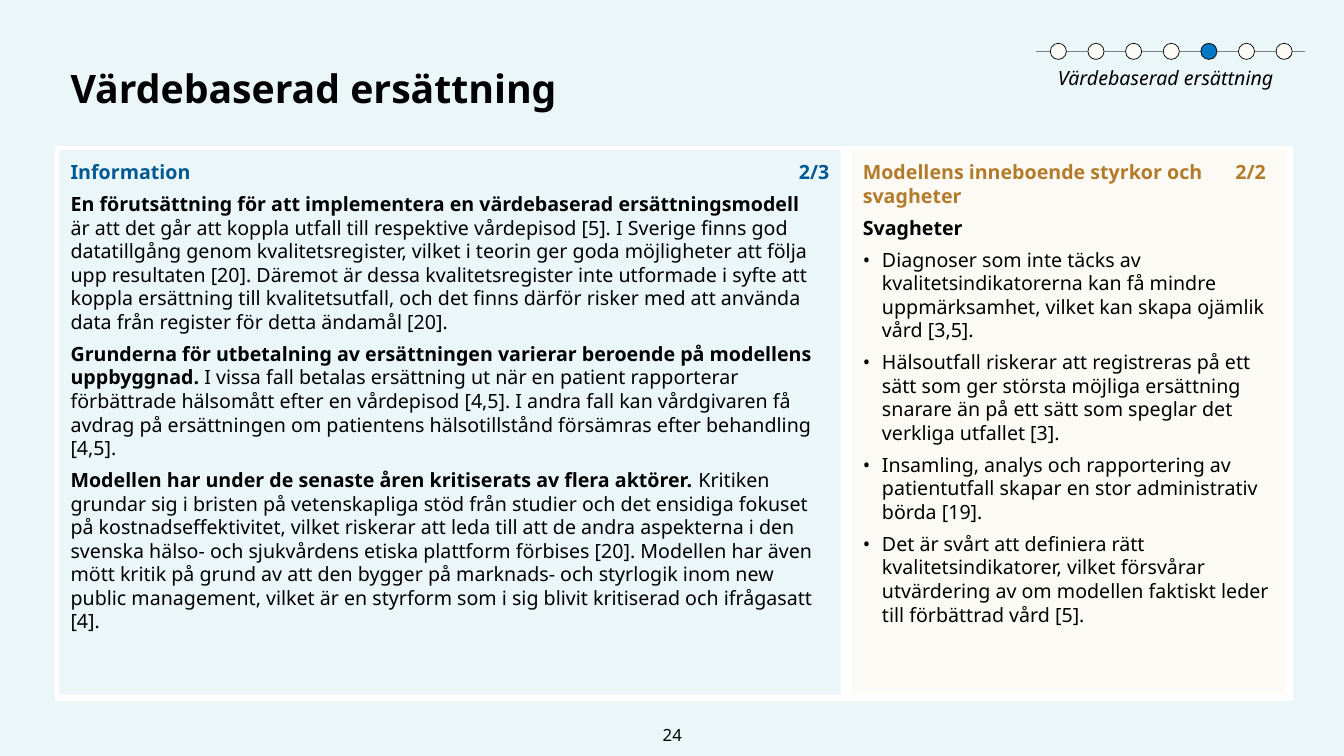
"""Build the slide on value-based reimbursement."""
from dataclasses import dataclass

from lxml import etree
from pptx import Presentation
from pptx.dml.color import RGBColor
from pptx.enum.shapes import MSO_CONNECTOR, MSO_SHAPE
from pptx.enum.text import MSO_ANCHOR, MSO_AUTO_SIZE, PP_ALIGN
from pptx.oxml.ns import qn
from pptx.shapes.autoshape import Shape
from pptx.slide import Slide
from pptx.util import Inches, Pt

LEFT, MID, RIGHT = PP_ALIGN.LEFT, PP_ALIGN.CENTER, PP_ALIGN.RIGHT
TOP, CENTER, BOTTOM = MSO_ANCHOR.TOP, MSO_ANCHOR.MIDDLE, MSO_ANCHOR.BOTTOM
RECT, OVAL = MSO_SHAPE.RECTANGLE, MSO_SHAPE.OVAL
LINE = MSO_CONNECTOR.STRAIGHT
FIXED = MSO_AUTO_SIZE.NONE

FONT = "Noto Sans"
BLACK = RGBColor(0x00, 0x00, 0x00)
WHITE = RGBColor(0xFF, 0xFF, 0xFF)
GREY = RGBColor(0x80, 0x80, 0x80)
ICE = RGBColor(0xEB, 0xF6, 0xF9)
CREAM = RGBColor(0xFC, 0xFA, 0xF5)
NAVY = RGBColor(0x00, 0x58, 0x92)
BLUE = RGBColor(0x00, 0x78, 0xC4)
GOLD = RGBColor(0xB2, 0x7B, 0x2A)

STEPS, ACTIVE = 7, 4
DOT, FIRST, LAST = 0.16, 10.42, 12.66
TOPIC = "Värdebaserad ersättning"


@dataclass(frozen=True)
class Box:
    left: float
    top: float
    width: float
    height: float


@dataclass(frozen=True)
class Para:
    lead: str = ""
    rest: str = ""
    color: RGBColor = BLACK
    bullet: bool = False


@dataclass(frozen=True)
class Panel:
    back: Box
    body: Box
    badge: Box
    fill: RGBColor
    color: RGBColor
    page: str
    paras: tuple[Para, ...]


PANELS = (
    Panel(
        Box(0.59, 1.49, 7.75, 5.4), Box(0.7, 1.59, 7.53, 4.88),
        Box(7.26, 1.59, 0.97, 0.23), ICE, NAVY, "2/3",
        (
            Para("Information", color=NAVY),
            Para(
                "En förutsättning för att implementera en värdebaserad ersättningsmodell ",
                "är att det går att koppla utfall till respektive vårdepisod [5]. I Sverige "
                "finns god datatillgång genom kvalitetsregister, vilket i teorin ger goda "
                "möjligheter att följa upp resultaten [20]. Däremot är dessa "
                "kvalitetsregister inte utformade i syfte att koppla ersättning till "
                "kvalitetsutfall, och det finns därför risker med att använda data från "
                "register för detta ändamål [20].",
            ),
            Para(
                "Grunderna för utbetalning av ersättningen varierar beroende på modellens "
                "uppbyggnad. ",
                "I vissa fall betalas ersättning ut när en patient rapporterar förbättrade "
                "hälsomått efter en vårdepisod [4,5]. I andra fall kan vårdgivaren få avdrag "
                "på ersättningen om patientens hälsotillstånd försämras efter behandling "
                "[4,5].",
            ),
            Para(
                "Modellen har under de senaste åren kritiserats av flera aktörer. ",
                "Kritiken grundar sig i bristen på vetenskapliga stöd från studier och det "
                "ensidiga fokuset på kostnadseffektivitet, vilket riskerar att leda till att "
                "de andra aspekterna i den svenska hälso- och sjukvårdens etiska plattform "
                "förbises [20]. Modellen har även mött kritik på grund av att den bygger på "
                "marknads- och styrlogik inom new public management, vilket är en styrform "
                "som i sig blivit kritiserad och ifrågasatt [4].",
            ),
        ),
    ),
    Panel(
        Box(8.45, 1.49, 4.3, 5.4), Box(8.56, 1.59, 4.19, 5.2),
        Box(11.59, 1.59, 0.97, 0.23), CREAM, GOLD, "2/2",
        (
            Para("Modellens inneboende styrkor och svagheter", color=GOLD),
            Para("Svagheter"),
            Para(rest="Diagnoser som inte täcks av kvalitetsindikatorerna kan få mindre "
                 "uppmärksamhet, vilket kan skapa ojämlik vård [3,5].", bullet=True),
            Para(rest="Hälsoutfall riskerar att registreras på ett sätt som ger största "
                 "möjliga ersättning snarare än på ett sätt som speglar det verkliga "
                 "utfallet [3].", bullet=True),
            Para(rest="Insamling, analys och rapportering av patientutfall skapar en stor "
                 "administrativ börda [19].", bullet=True),
            Para(rest="Det är svårt att definiera rätt kvalitetsindikatorer, vilket "
                 "försvårar utvärdering av om modellen faktiskt leder till förbättrad vård "
                 "[5].", bullet=True),
        ),
    ),
)


def place(shape: Shape, box: Box) -> None:
    """Move a shape to its box."""
    shape.left, shape.top = Inches(box.left), Inches(box.top)
    shape.width, shape.height = Inches(box.width), Inches(box.height)


def write(shape: Shape, *paras: Para, size: float = 14, align: PP_ALIGN = LEFT,
          anchor: MSO_ANCHOR = TOP, inset: tuple[float, ...] = (0, 0, 0.1, 0.05),
          pitch: float = 1.0, after: float = 0, italic: bool = False) -> None:
    """Fill a shape with formatted paragraphs."""
    frame = shape.text_frame
    frame.word_wrap, frame.auto_size = True, FIXED
    frame.vertical_anchor = anchor
    (frame.margin_left, frame.margin_top,
     frame.margin_right, frame.margin_bottom) = map(Inches, inset)
    for num, para in enumerate(paras):
        line = frame.add_paragraph() if num else frame.paragraphs[0]
        line.alignment, line.line_spacing = align, pitch
        line.space_before, line.space_after = Pt(0), Pt(after)
        props = line._p.get_or_add_pPr()
        dent = Inches(0.19) if para.bullet else 0
        props.set("marL", str(dent))
        props.set("indent", str(-dent))
        if para.bullet:
            etree.SubElement(props, qn("a:buFont"), typeface=FONT)
            etree.SubElement(props, qn("a:buChar"), char="•")
        else:
            etree.SubElement(props, qn("a:buNone"))
        for text, bold in ((para.lead, True), (para.rest, False)):
            if text:
                run = line.add_run()
                run.text = text
                font = run.font
                font.name, font.size = FONT, Pt(size)
                font.bold, font.italic = bold, italic
                font.color.rgb = para.color


def label(slide: Slide, box: Box) -> Shape:
    """Add an empty text box."""
    shape = slide.shapes.add_textbox(0, 0, 0, 0)
    place(shape, box)
    return shape


def draw(slide: Slide, kind: MSO_SHAPE, box: Box, fill: RGBColor,
         edge: RGBColor | None = None, weight: float = 1) -> None:
    """Add a filled shape with an optional outline."""
    shape = slide.shapes.add_shape(kind, 0, 0, 0, 0)
    place(shape, box)
    shape.shadow.inherit = False
    shape.fill.solid()
    shape.fill.fore_color.rgb = fill
    if edge is None:
        shape.line.fill.background()
    else:
        shape.line.color.rgb, shape.line.width = edge, Pt(weight)


def track(slide: Slide) -> None:
    """Draw the row of progress dots on its line."""
    mid = Inches(0.51)
    rail = slide.shapes.add_connector(LINE, Inches(12.95), mid, Inches(10.28), mid)
    rail.line.color.rgb, rail.line.width = GREY, Pt(1)
    etree.SubElement(rail._element.spPr, qn("a:effectLst"))
    step = (LAST - FIRST) / (STEPS - 1)
    for num in range(STEPS):
        fill = BLUE if num == ACTIVE else CREAM
        draw(slide, OVAL, Box(FIRST + num * step, 0.43, DOT, DOT), fill, BLACK, 0.5)


def main() -> None:
    """Build and save the slide."""
    deck = Presentation()
    deck.slide_width, deck.slide_height = Inches(40 / 3), Inches(7.5)
    slide = deck.slides.add_slide(deck.slide_layouts[3])
    slide.background.fill.solid()
    slide.background.fill.fore_color.rgb = ICE
    title, *bodies = slide.placeholders
    draw(slide, RECT, Box(0.55, 1.46, 12.27, 5.49), WHITE, WHITE)
    place(title, Box(0.7, 0.59, 11.94, 0.8))
    write(title, Para(TOPIC), size=28, pitch=1.1)
    for panel, body in zip(PANELS, bodies):
        draw(slide, RECT, panel.back, panel.fill)
        place(body, panel.body)
        body.element.getparent().append(body.element)
        write(body, *panel.paras, after=6)
        write(label(slide, panel.badge), Para(panel.page, color=panel.color),
              align=RIGHT, anchor=BOTTOM, inset=(0, 0.05, 0, 0))
    write(label(slide, Box(10.38, 0.61, 2.47, 0.16)), Para(rest=TOPIC),
          align=MID, inset=(0, 0.05, 0.1, 0.05), italic=True)
    track(slide)
    write(label(slide, Box(6.16, 7.09, 1.02, 0.4)), Para(rest="24"), size=12,
          align=MID, anchor=CENTER, inset=(0.1, 0.05, 0.1, 0.05))
    deck.save("out.pptx")


if __name__ == "__main__":
    main()
